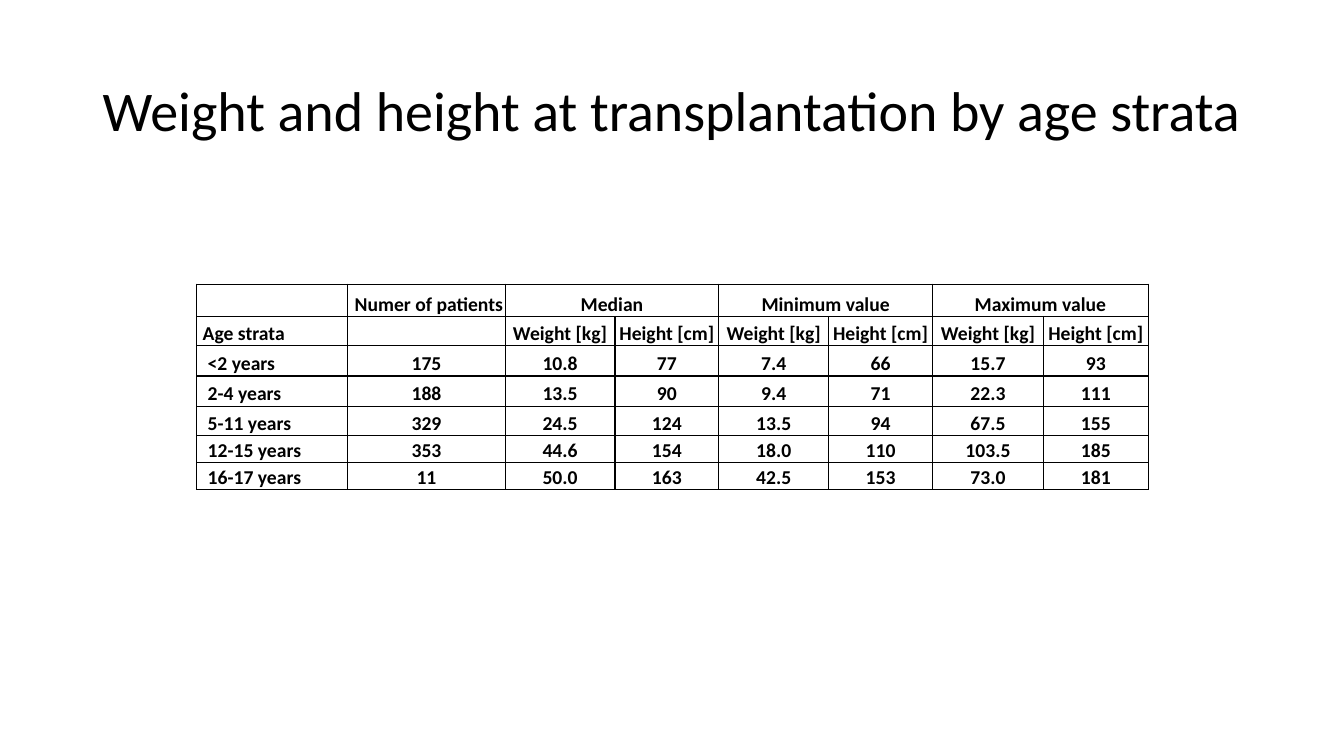
import pptx
import pptx.util
import pptx.dml.color
import pptx.enum.text
import pptx.oxml.ns
import lxml.etree

PX = 9144
BLACK = pptx.dml.color.RGBColor(0, 0, 0)
WHITE = pptx.dml.color.RGBColor(255, 255, 255)
ALIGN = pptx.enum.text.PP_ALIGN
ANCHOR = pptx.enum.text.MSO_ANCHOR
TITLE_FORMAT = {"name": "Calibri", "size": pptx.util.Pt(40)}
CELL_FORMAT = {"name": "Calibri", "size": pptx.util.Pt(14), "bold": True}
CELL_LAYOUT = {
    "margin_left": 2 * PX, "margin_right": 2 * PX, "margin_top": 2 * PX,
    "margin_bottom": 0, "vertical_anchor": ANCHOR.BOTTOM,
}

COLUMN_WIDTHS = [150, 156, 109, 103, 109, 103, 110, 104]
ROW_HEIGHTS = [32, 29, 30, 30, 29, 27, 27]
MEASURES = ["Weight [kg]", "Height [cm]"]
ROWS = [
    ["", "Numer of patients", "Median", "", "Minimum value", "", "Maximum value", ""],
    ["Age strata", "", *MEASURES * 3],
    ["<2 years", "175", "10.8", "77", "7.4", "66", "15.7", "93"],
    ["2-4 years", "188", "13.5", "90", "9.4", "71", "22.3", "111"],
    ["5-11 years", "329", "24.5", "124", "13.5", "94", "67.5", "155"],
    ["12-15 years", "353", "44.6", "154", "18.0", "110", "103.5", "185"],
    ["16-17 years", "11", "50.0", "163", "42.5", "153", "73.0", "181"],
]


def apply_format(target, values):
    for name, value in values.items():
        setattr(target, name, value)


def add_span(para, text, values):
    span = para.add_run()
    span.text = text
    apply_format(span.font, values)
    span.font.color.rgb = BLACK


def add_title(page, text, left, top, width, height):
    box = page.shapes.add_textbox(left * PX, top * PX, width * PX, height * PX)
    apply_format(box.text_frame, {"word_wrap": True, "vertical_anchor": ANCHOR.MIDDLE})
    para = box.text_frame.paragraphs[0]
    para.line_spacing = 0.9
    add_span(para, text, TITLE_FORMAT)


def add_borders(cell):
    properties = cell._tc.get_or_add_tcPr()
    for side in ("lnL", "lnR", "lnT", "lnB"):
        line = lxml.etree.SubElement(properties, pptx.oxml.ns.qn(f"a:{side}"), w="12700")
        fill = lxml.etree.SubElement(line, pptx.oxml.ns.qn("a:solidFill"))
        lxml.etree.SubElement(fill, pptx.oxml.ns.qn("a:srgbClr"), val=str(BLACK))


def fill_cell(cell, text, alignment, indent):
    apply_format(cell, CELL_LAYOUT)
    cell.margin_left = (2 + indent) * PX
    add_borders(cell)
    cell.fill.solid()
    cell.fill.fore_color.rgb = WHITE
    para = cell.text_frame.paragraphs[0]
    para.alignment = alignment
    if text:
        add_span(para, text, CELL_FORMAT)
    else:
        lxml.etree.SubElement(para._p, pptx.oxml.ns.qn("a:endParaRPr"), sz="1400")


def add_strata_table(page, left, top):
    width, height = sum(COLUMN_WIDTHS), sum(ROW_HEIGHTS)
    frame = page.shapes.add_table(
        len(ROWS), len(COLUMN_WIDTHS), left * PX, top * PX, width * PX, height * PX)
    table = frame.table
    apply_format(table, {"first_row": False, "horz_banding": False})
    for column, column_width in zip(table.columns, COLUMN_WIDTHS):
        column.width = column_width * PX
    for row, row_height in zip(table.rows, ROW_HEIGHTS):
        row.height = row_height * PX
    for i, texts in enumerate(ROWS):
        for j, text in enumerate(texts):
            alignment = ALIGN.LEFT if j == 0 else ALIGN.CENTER
            if (i, j) == (0, 1):
                alignment = ALIGN.RIGHT
            indent = 0 if j else 4 if i == 1 else 9
            fill_cell(table.cell(i, j), text, alignment, indent)
    for j in range(2, len(COLUMN_WIDTHS), 2):
        table.cell(0, j).merge(table.cell(0, j + 1))


def main():
    deck = pptx.Presentation()
    apply_format(deck, {"slide_width": 1333 * PX, "slide_height": 750 * PX})
    page = deck.slides.add_slide(deck.slide_layouts[6])
    add_strata_table(page, 195, 282)
    add_title(page, "Weight and height at transplantation by age strata", 92, 40, 1150, 145)
    deck.save("out.pptx")


if __name__ == "__main__":
    main()
